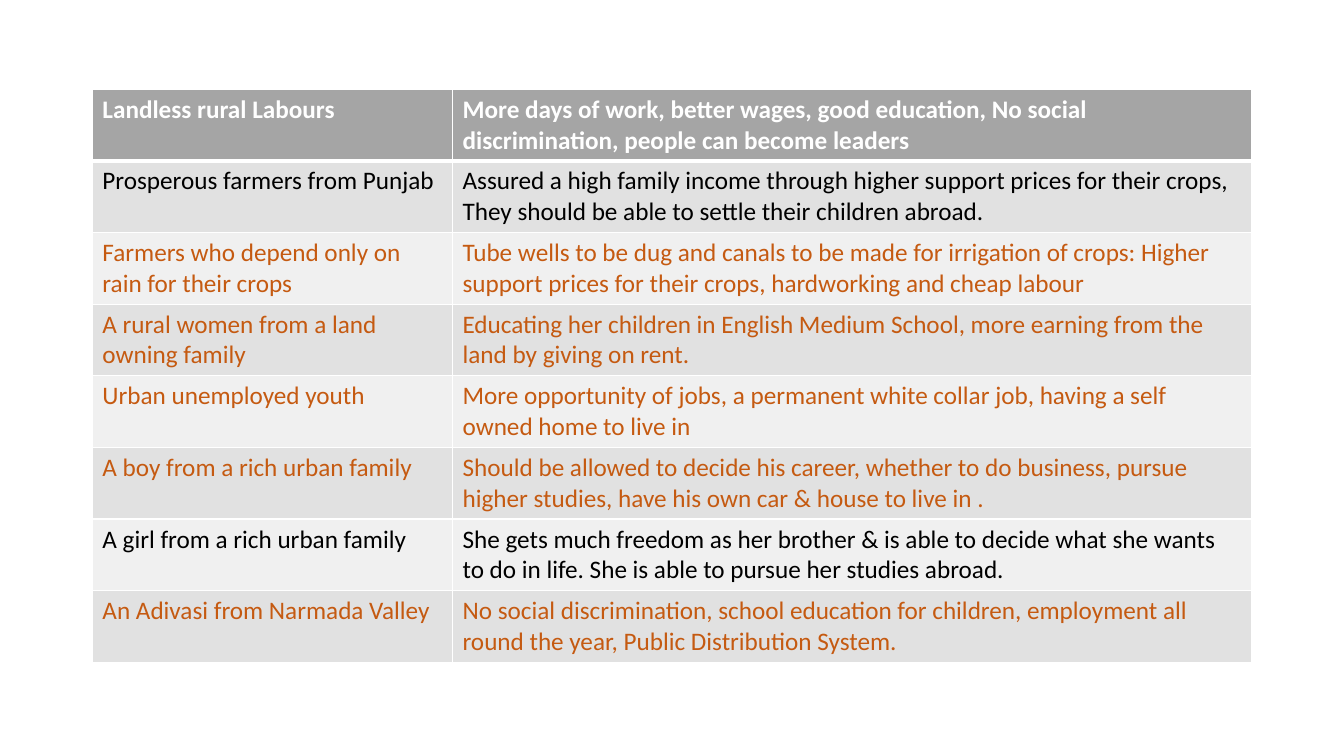
from lxml.etree import SubElement
from pptx import Presentation
from pptx.dml.color import RGBColor
from pptx.oxml.ns import qn
from pptx.util import Emu, Pt

PX = 9525  # EMU per px, at 96 px to the inch
COLORS = {
    "header": "A5A5A5",
    "odd_row": "E1E1E1",
    "even_row": "F0F0F0",
    "white": "FFFFFF",
    "black": "000000",
    "orange": "C55A11",
}
GOALS = [
    ("white", "Landless rural Labours",
     "More days of work, better wages, good education, No social discrimination, "
     "people can become leaders"),
    ("black", "Prosperous farmers from Punjab",
     "Assured a high family income through higher support prices for their crops, "
     "They should be able to settle their children abroad."),
    ("orange", "Farmers who depend only on rain for their crops",
     "Tube wells to be dug and canals to be made for irrigation of crops: Higher "
     "support prices for their crops, hardworking and cheap labour"),
    ("orange", "A rural women from a land owning family",
     "Educating her children in English Medium School, more earning from the land "
     "by giving on rent."),
    ("orange", "Urban unemployed youth",
     "More opportunity of jobs, a permanent white collar job, having a self owned "
     "home to live in"),
    ("orange", "A boy from a rich urban family",
     "Should be allowed to decide his career, whether to do business, pursue higher "
     "studies, have his own car & house to live in ."),
    ("black", "A girl from a rich urban family",
     "She gets much freedom as her brother & is able to decide what she wants to do "
     "in life. She is able to pursue her studies abroad."),
    ("orange", "An Adivasi from Narmada Valley",
     "No social discrimination, school education for children, employment all round "
     "the year, Public Distribution System."),
]
COLUMN_WIDTHS = (343, 761)
ROW_HEIGHT = 67


def add_border(cell, side, points):
    line = SubElement(cell._tc.get_or_add_tcPr(), qn(f"a:ln{side}"), w=str(Pt(points)))
    fill = SubElement(line, qn("a:solidFill"))
    SubElement(fill, qn("a:srgbClr"), val=COLORS["white"])


prs = Presentation()
prs.slide_width, prs.slide_height = Emu(1280 * PX), Emu(720 * PX)
slide = prs.slides.add_slide(prs.slide_layouts[6])

goals_table = slide.shapes.add_table(
    len(GOALS), len(COLUMN_WIDTHS), Emu(88 * PX), Emu(85 * PX),
    Emu(sum(COLUMN_WIDTHS) * PX), Emu(len(GOALS) * ROW_HEIGHT * PX)).table
for column, width in zip(goals_table.columns, COLUMN_WIDTHS):
    column.width = Emu(width * PX)

for row, (text_color, *texts) in enumerate(GOALS):
    is_header = row == 0
    row_fill = "header" if is_header else "odd_row" if row % 2 else "even_row"
    for col, text in enumerate(texts):
        cell = goals_table.cell(row, col)
        for side in "LRTB":
            under_header = (row, side) in ((0, "B"), (1, "T"))
            add_border(cell, side, 3 if under_header else 1)
        cell.fill.solid()
        cell.fill.fore_color.rgb = RGBColor.from_string(COLORS[row_fill])
        run = cell.text_frame.paragraphs[0].add_run()
        run.text = text
        run.font.name = "Calibri"
        run.font.size = Pt(18)
        run.font.bold = is_header
        run.font.color.rgb = RGBColor.from_string(COLORS[text_color])

prs.save("out.pptx")
